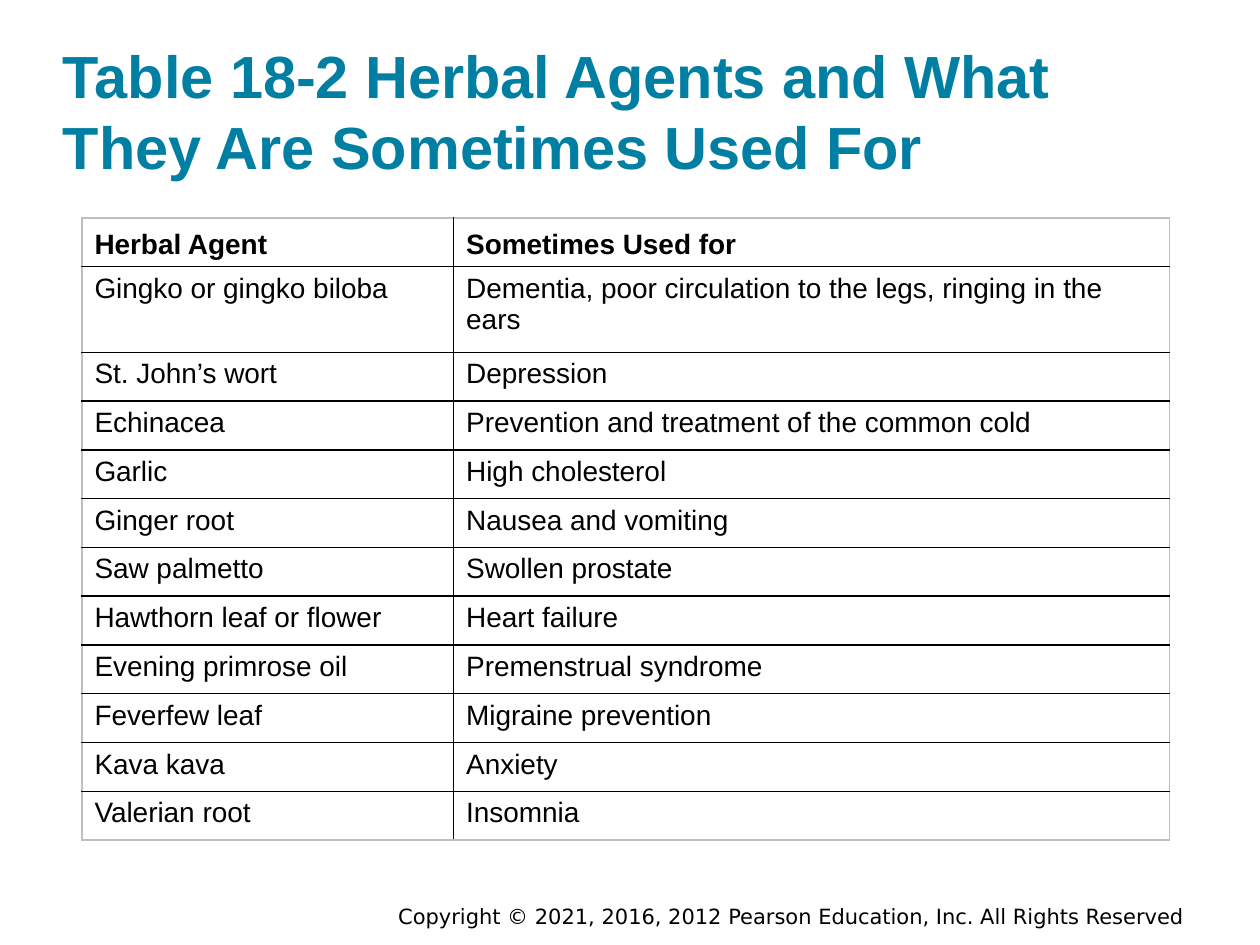
from lxml import etree
from pptx import Presentation
from pptx.dml.color import RGBColor
from pptx.enum.text import MSO_ANCHOR, PP_ALIGN
from pptx.oxml.ns import qn
from pptx.util import Inches, Pt

TOP, MIDDLE, BOTTOM = MSO_ANCHOR.TOP, MSO_ANCHOR.MIDDLE, MSO_ANCHOR.BOTTOM
LEFT, RIGHT = PP_ALIGN.LEFT, PP_ALIGN.RIGHT
BLACK, TEAL, GRAY = "000000", "007FA3", "BFBFBF"

ROWS = [
    ("Herbal Agent", "Sometimes Used for"),
    ("Gingko or gingko biloba", "Dementia, poor circulation to the legs, ringing in the ears"),
    ("St. John’s wort", "Depression"),
    ("Echinacea", "Prevention and treatment of the common cold"),
    ("Garlic", "High cholesterol"),
    ("Ginger root", "Nausea and vomiting"),
    ("Saw palmetto", "Swollen prostate"),
    ("Hawthorn leaf or flower", "Heart failure"),
    ("Evening primrose oil", "Premenstrual syndrome"),
    ("Feverfew leaf", "Migraine prevention"),
    ("Kava kava", "Anxiety"),
    ("Valerian root", "Insomnia"),
]


def rgb(value):
    return RGBColor.from_string(value)


def add_run(p, text, size, color=BLACK, font="Arial", bold=False):
    r = p.add_run()
    r.text = text
    r.font.size = Pt(size)
    r.font.name = font
    r.font.bold = bold
    r.font.color.rgb = rgb(color)


def add_text(slide, box, anchor, align, margins, text, size, **style):
    sp = slide.shapes.add_textbox(*map(Inches, box))
    tf = sp.text_frame
    tf.word_wrap = True
    tf.vertical_anchor = anchor
    tf.margin_left = tf.margin_right = Inches(margins[0])
    tf.margin_top = tf.margin_bottom = Inches(margins[1])
    p = tf.paragraphs[0]
    p.alignment = align
    add_run(p, text, size, **style)


def set_borders(cell, colors):
    tc_pr = cell._tc.get_or_add_tcPr()
    for i, (side, color) in enumerate(colors.items()):
        ln = etree.Element(qn(f"a:{side}"), w=str(Pt(1)))
        fill = etree.SubElement(ln, qn("a:solidFill"))
        etree.SubElement(fill, qn("a:srgbClr"), val=color)
        tc_pr.insert(i, ln)


def add_title(slide, box):
    add_text(slide, box, BOTTOM, LEFT, (0, 0),
             "Table 18-2 Herbal Agents and What They Are Sometimes Used For",
             34, color=TEAL, bold=True)


def add_herb_table(slide, box):
    width, height = box[2:]
    tall_row = 0.68
    row_height = (height - tall_row) / (len(ROWS) - 1)
    first_col = 2.95
    table = slide.shapes.add_table(len(ROWS), 2, *map(Inches, box)).table
    table.first_row = table.horz_banding = False
    for col, w in zip(table.columns, (first_col, width - first_col)):
        col.width = Inches(w)
    last = len(ROWS) - 1
    for i, texts in enumerate(ROWS):
        table.rows[i].height = Inches(tall_row if i == 1 else row_height)
        for j, text in enumerate(texts):
            cell = table.cell(i, j)
            cell.fill.background()
            cell.vertical_anchor = BOTTOM if i == 0 else TOP
            add_run(cell.text_frame.paragraphs[0], text, 16, bold=i == 0)
            set_borders(cell, {
                "lnL": GRAY if j == 0 else BLACK,
                "lnR": GRAY if j == 1 else BLACK,
                "lnT": GRAY if i == 0 else BLACK,
                "lnB": GRAY if i == last else BLACK,
            })


def add_footer(slide, box):
    add_text(slide, box, MIDDLE, RIGHT, (0.1, 0.05),
             "Copyright © 2021, 2016, 2012 Pearson Education, Inc. All Rights Reserved",
             12, font="DejaVu Sans")


def main():
    prs = Presentation()
    prs.slide_width, prs.slide_height = Inches(10), Inches(7.5)
    slide = prs.slides.add_slide(prs.slide_layouts[6])
    add_footer(slide, (2.9, 7.04, 6.6, 0.46))
    add_title(slide, (0.5, 0.24, 9, 1.2))
    add_herb_table(slide, (0.65, 1.73, 8.63, 4.94))
    prs.save("out.pptx")


if __name__ == "__main__":
    main()
